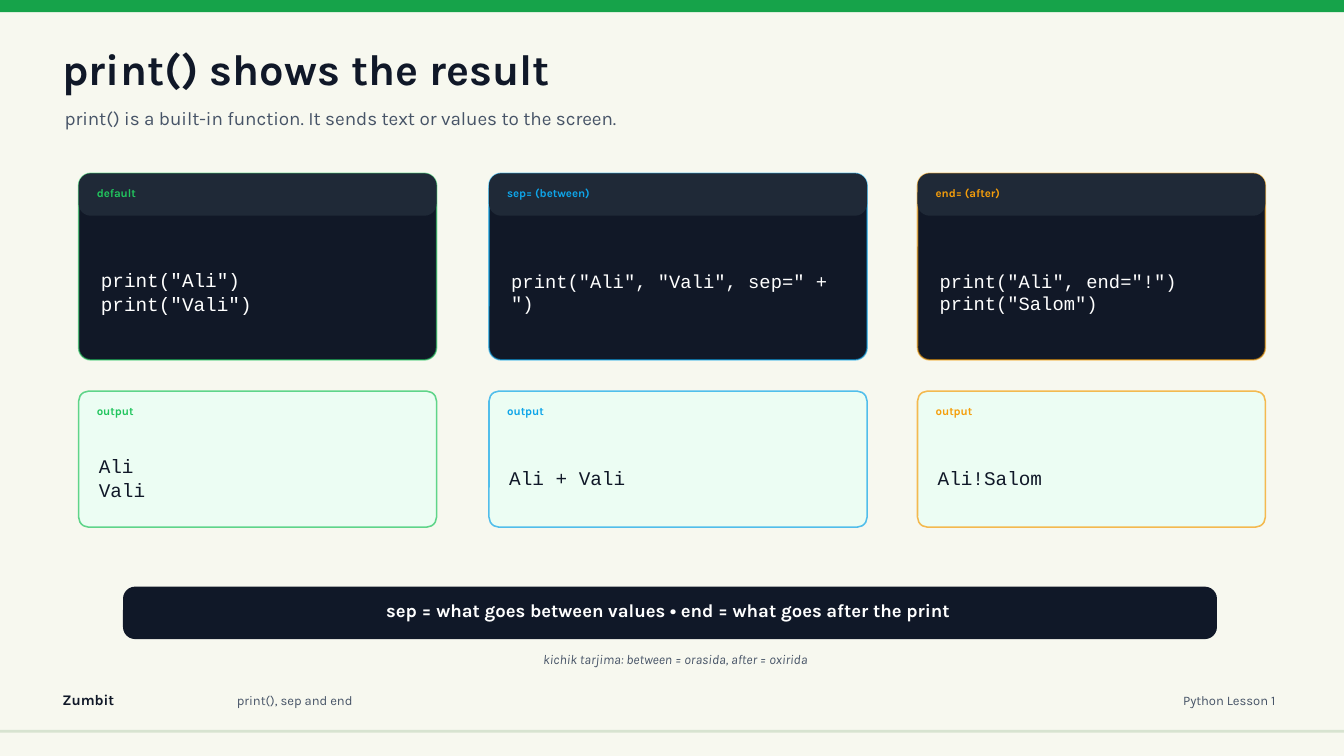
import pptx
import pptx.dml.color
import pptx.enum.shapes
import pptx.enum.text
import pptx.oxml.ns
import pptx.util
from lxml import etree

Inches = pptx.util.Inches
ALIGN = pptx.enum.text.PP_ALIGN
SHAPES = pptx.enum.shapes.MSO_SHAPE

COLORS = {
    "paper": "F7F8EF", "brand": "16A34A", "rule": "D7E3D0",
    "ink": "101828", "muted": "475467", "white": "FFFFFF",
    "code": "111827", "code_bar": "1F2937", "output": "ECFDF3",
    "green": "22C55E", "blue": "0EA5E9", "amber": "F59E0B",
}
BODY_FONT, CODE_FONT = "Karla", "Courier New"
SLIDE_W, SLIDE_H = 13.33, 7.5

# Card: left, width, accent, label, code size, code, output
CARDS = [
    (0.78, 3.55, "green", "default", 13.8,
     'print("Ali")\nprint("Vali")', "Ali\nVali"),
    (4.85, 3.75, "blue", "sep= (between)", 13.4,
     'print("Ali", "Vali", sep=" + ")', "Ali + Vali"),
    (9.1, 3.45, "amber", "end= (after)", 13.4,
     'print("Ali", end="!")\nprint("Salom")', "Ali!Salom"),
]


def rgb(name):
    return pptx.dml.color.RGBColor.from_string(COLORS[name])


def write(sp, text, size, color="ink", font=BODY_FONT, bold=False,
          italic=False, align=ALIGN.LEFT):
    """Fill a shape with text, one paragraph per line."""
    tf = sp.text_frame
    tf.text = text
    tf.word_wrap = True
    tf.auto_size = pptx.enum.text.MSO_AUTO_SIZE.NONE
    tf.vertical_anchor = pptx.enum.text.MSO_ANCHOR.MIDDLE
    tf.margin_left = tf.margin_right = tf.margin_top = tf.margin_bottom = 0
    for p in tf.paragraphs:
        p.alignment = align
        for r in p.runs:
            r.font.name, r.font.size = font, pptx.util.Pt(size)
            r.font.bold, r.font.italic = bold, italic
            r.font.color.rgb = rgb(color)


def add_text(s, x, y, w, h, text, size, **fmt):
    box = s.shapes.add_textbox(Inches(x), Inches(y), Inches(w), Inches(h))
    write(box, text, size, **fmt)


def add_box(s, x, y, w, h, fill, radius=0, line=None, opacity=100):
    """Draw a filled rectangle; radius is the corner radius in inches."""
    kind = SHAPES.ROUNDED_RECTANGLE if radius else SHAPES.RECTANGLE
    sp = s.shapes.add_shape(kind, Inches(x), Inches(y), Inches(w), Inches(h))
    sp.shadow.inherit = False
    sp.fill.solid()
    sp.fill.fore_color.rgb = rgb(fill)
    if radius:
        sp.adjustments[0] = radius / min(w, h)
    if line:
        sp.line.color.rgb = rgb(line)
        sp.line.width = pptx.util.Pt(1.1)
        qn = pptx.oxml.ns.qn
        clr = sp.line._get_or_add_ln().find(".//" + qn("a:srgbClr"))
        etree.SubElement(clr, qn("a:alpha"), val=str(opacity * 1000))
    else:
        sp.line.fill.background()


def add_frame(s):
    """Top band and bottom rule."""
    add_box(s, 0, 0, SLIDE_W, 0.12, "brand")
    add_box(s, 0, SLIDE_H - 0.26, SLIDE_W, 0.03, "rule")


def add_header(s, x, y):
    title = s.shapes.title
    title.left, title.top = Inches(x), Inches(y)
    title.width, title.height = Inches(8.4), Inches(0.52)
    write(title, "print() shows the result", 31, bold=True)
    add_text(s, x + 0.02, y + 0.6, 10.6, 0.3,
             "print() is a built-in function. It sends text or values to the screen.",
             13.5, color="muted")


def add_code_card(s, x, y, w, h, accent, label, size, code):
    add_box(s, x, y, w, h, "code", 0.12, accent, 60)
    add_box(s, x, y, w, 0.42, "code_bar", 0.12)
    add_text(s, x + 0.18, y + 0.12, w - 0.36, 0.14, label, 8.2,
             color=accent, bold=True)
    add_text(s, x + 0.22, y + 0.6, w - 0.44, h - 0.7, code, size,
             color="white", font=CODE_FONT)


def add_output_card(s, x, y, w, h, accent, result):
    add_box(s, x, y, w, h, "output", 0.1, accent, 70)
    add_text(s, x + 0.18, y + 0.13, w - 0.36, 0.14, "output", 8.2,
             color=accent, bold=True)
    add_text(s, x + 0.2, y + 0.46, w - 0.4, h - 0.55, result, 13.8,
             font=CODE_FONT)


def add_summary(s, x, y, w, h):
    add_box(s, x, y, w, h, "ink", 0.12)
    add_text(s, x + 0.23, y + 0.15, w - 0.5, 0.16,
             "sep = what goes between values • end = what goes after the print",
             13.2, color="white", bold=True, align=ALIGN.CENTER)
    add_text(s, x + 1.03, y + h + 0.11, 8.9, 0.18,
             "kichik tarjima: between = orasida, after = oxirida",
             9.5, color="muted", italic=True, align=ALIGN.CENTER)


def add_footer(s, x, y, w):
    add_text(s, x, y, 1.2, 0.22, "Zumbit", 10.5, bold=True)
    add_text(s, x + 1.73, y + 0.01, 6.5, 0.22, "print(), sep and end", 9.3,
             color="muted")
    add_text(s, x + w - 1.85, y + 0.01, 1.85, 0.22, "Python Lesson 1", 9.3,
             color="muted", align=ALIGN.RIGHT)


def main():
    prs = pptx.Presentation()
    prs.slide_width, prs.slide_height = Inches(SLIDE_W), Inches(SLIDE_H)
    s = prs.slides.add_slide(prs.slide_layouts[5])
    s.background.fill.solid()
    s.background.fill.fore_color.rgb = rgb("paper")

    add_frame(s)
    add_header(s, 0.62, 0.42)
    for x, w, accent, label, size, code, result in CARDS:
        add_code_card(s, x, 1.72, w, 1.85, accent, label, size, code)
        add_output_card(s, x, 3.88, w, 1.35, accent, result)
    add_summary(s, 1.22, 5.82, 10.85, 0.52)
    add_footer(s, 0.62, 6.83, 12.03)
    prs.save("out.pptx")


if __name__ == "__main__":
    main()
